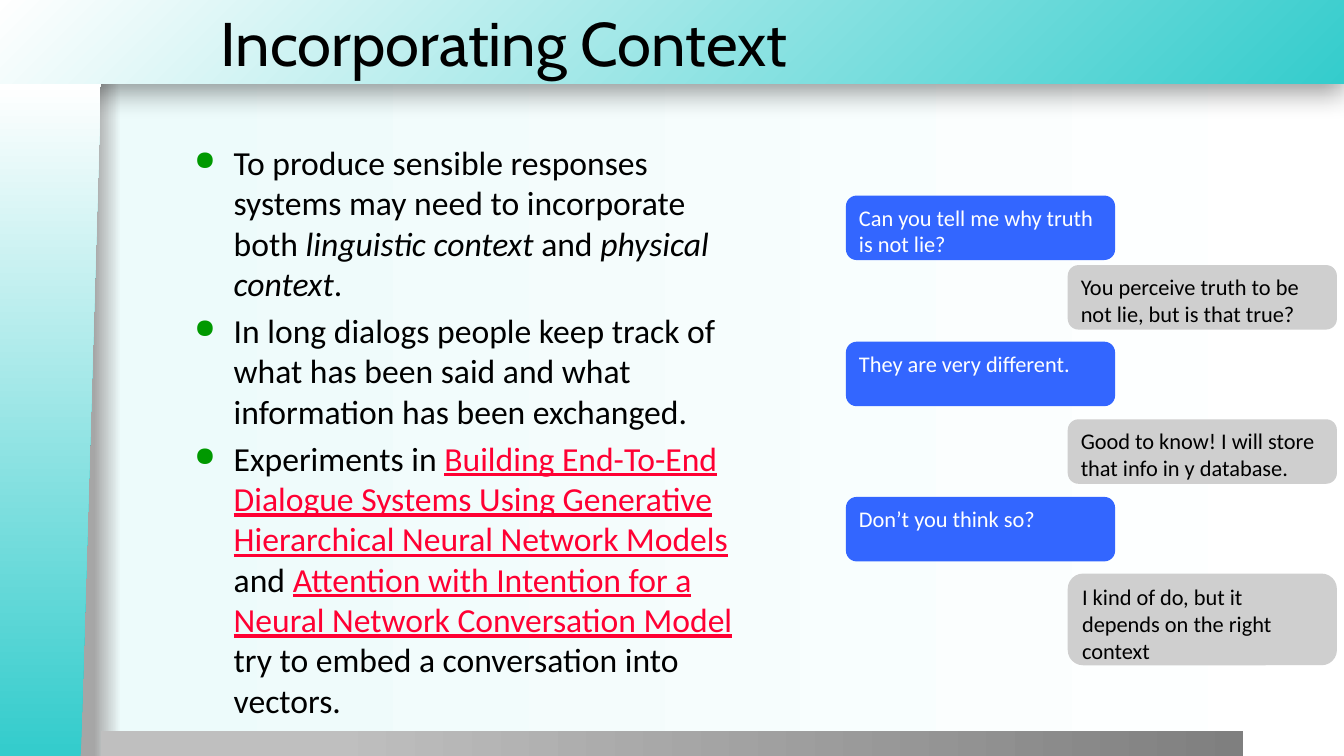
"""Build the Incorporating Context slide with its themed frame, bullets and chat."""
import pptx
import pptx.dml.color
import pptx.enum.shapes
import pptx.enum.text
import pptx.oxml
import pptx.oxml.ns
import pptx.util

TITLE = "Incorporating Context"
BULLETS = [
    [("To produce sensible responses systems may need to incorporate both ", "plain"),
     ("linguistic context", "italic"), (" and ", "plain"),
     ("physical context", "italic"), (".", "plain")],
    [("In long dialogs people keep track of what has been said and what "
      "information has been exchanged.", "plain")],
    [("Experiments in ", "plain"),
     ("Building End-To-End Dialogue Systems Using Generative Hierarchical "
      "Neural Network Models", "link"),
     (" and ", "plain"),
     ("Attention with Intention for a Neural Network Conversation Model", "link"),
     (" try to embed a conversation into vectors.", "plain")],
]
CHAT = [
    ("user", 1.94, 0.64, "Can you tell me why truth is not lie?"),
    ("system", 2.63, 0.64, "You perceive truth to be not lie, but is that true?"),
    ("user", 3.39, 0.64, "They are very different."),
    ("system", 4.16, 0.64, "Good to know! I will store that info in y database."),
    ("user", 4.93, 0.64, "Don’t you think so?"),
    ("system", 5.69, 0.91, "I kind of do, but it depends on the right context"),
]
THEME = {
    "heading": "Cabin", "body": "Calibri",
    "title_size": 44, "bullet_size": 24, "chat_size": 16,
    "ink": "000000", "link": "FF0033", "bullet": "009900",
    "background": [(7, "A6A6A6"), (9, "EDFBFB"), (100, "FFFFFF")],
    "band": [(0, "34CCCC"), (100, "FFFFFF")],
    "side": [(1, "34CCCC"), (100, "FFFFFF")],
    "footer": [(20, "BFBFBF"), (100, "7F7F7F")],
}
SPEAKERS = {
    "user": {"left": 8.39, "fill": "3366FF", "color": "FFFFFF"},
    "system": {"left": 10.59, "fill": "CFCFCF", "color": "000000"},
}
STYLES = {
    "plain": {},
    "italic": {"italic": True},
    "link": {"color": THEME["link"], "underline": True},
}
BUBBLE_WIDTH = 2.67
SHAPE = pptx.enum.shapes.MSO_SHAPE
ANCHOR = pptx.enum.text.MSO_ANCHOR
NAMESPACE = pptx.oxml.ns.nsdecls("a")


def rgb(value):
    return pptx.dml.color.RGBColor.from_string(value)


def inches(*lengths):
    return [pptx.util.Inches(length) for length in lengths]


def add_text(para, text, size, font=THEME["body"], color=THEME["ink"],
             italic=False, underline=False):
    span = para.add_run()
    span.text = text
    span.font.size = pptx.util.Pt(size)
    span.font.name = font
    span.font.color.rgb = rgb(color)
    span.font.italic = italic
    span.font.underline = underline


def set_gradient(parent, stops, direction='<a:lin ang="0" scaled="0"/>'):
    marks = "".join(f'<a:gs pos="{position * 1000}"><a:srgbClr val="{color}"/></a:gs>'
                    for position, color in stops)
    gradient = pptx.oxml.parse_xml(
        f'<a:gradFill {NAMESPACE} rotWithShape="1"><a:gsLst>{marks}</a:gsLst>'
        f'{direction}</a:gradFill>')
    solid = parent.find(pptx.oxml.ns.qn("a:solidFill"))
    parent.replace(solid, gradient)


def add_panel(page, kind, place, fill):
    panel = page.shapes.add_shape(kind, *inches(*place))
    panel.shadow.inherit = False
    panel.fill.solid()
    panel.fill.fore_color.rgb = rgb(fill)
    panel.line.fill.background()
    return panel


def add_frame(page):
    page.background.fill.solid()
    page.background.fill.fore_color.rgb = rgb("FFFFFF")
    backdrop = next(page.element.iter(pptx.oxml.ns.qn("p:bgPr")))
    set_gradient(backdrop, THEME["background"])

    band = add_panel(page, SHAPE.RECTANGLE, (-0.01, 0, 13.34, 0.83), "FFFFFF")
    corner = ('<a:path path="circle"><a:fillToRect l="100000" t="100000"/></a:path>'
              '<a:tileRect r="-100000" b="-100000"/>')
    set_gradient(band.element.spPr, THEME["band"], corner)
    effects = band.element.spPr.find(pptx.oxml.ns.qn("a:effectLst"))
    effects.append(pptx.oxml.parse_xml(
        f'<a:outerShdw {NAMESPACE} blurRad="{pptx.util.Pt(20)}" '
        f'dist="{pptx.util.Pt(6)}" dir="5400000" algn="t" rotWithShape="0">'
        '<a:srgbClr val="000000"><a:alpha val="40000"/></a:srgbClr></a:outerShdw>'))

    footer = add_panel(page, SHAPE.RECTANGLE, (1, 7.25, 11.33, 0.26), "FFFFFF")
    set_gradient(footer.element.spPr, THEME["footer"])

    side = add_panel(page, SHAPE.FLOWCHART_MANUAL_INPUT, (-2.84, 3.67, 6.68, 1), "FFFFFF")
    side.rotation = 270
    side.element.spPr.get_or_add_xfrm().set("flipV", "1")
    set_gradient(side.element.spPr, THEME["side"])


def add_box(page, place, anchor):
    frame = page.shapes.add_textbox(*inches(*place)).text_frame
    frame.word_wrap = True
    frame.vertical_anchor = anchor
    return frame


def set_bullet(para):
    properties = para._p.get_or_add_pPr()
    indent = pptx.util.Inches(0.39)
    properties.set("marL", str(indent))
    properties.set("indent", str(-indent))
    for markup in (
        f'<a:spcBef {NAMESPACE}><a:spcPct val="20000"/></a:spcBef>',
        f'<a:buClr {NAMESPACE}><a:srgbClr val="{THEME["bullet"]}"/></a:buClr>',
        f'<a:buSzPct {NAMESPACE} val="80000"/>',
        f'<a:buChar {NAMESPACE} char="●"/>',
    ):
        properties.append(pptx.oxml.parse_xml(markup))


def add_bullets(page):
    frame = add_box(page, (1.83, 1.36, 5.63, 5.79), ANCHOR.TOP)
    for index, pieces in enumerate(BULLETS):
        para = frame.add_paragraph() if index else frame.paragraphs[0]
        set_bullet(para)
        for text, style in pieces:
            add_text(para, text, THEME["bullet_size"], **STYLES[style])


def add_chat(page):
    for speaker, top, height, text in CHAT:
        look = SPEAKERS[speaker]
        bubble = add_panel(page, SHAPE.ROUNDED_RECTANGLE,
                           (look["left"], top, BUBBLE_WIDTH, height), look["fill"])
        frame = bubble.text_frame
        frame.word_wrap = True
        frame.vertical_anchor = ANCHOR.TOP
        para = frame.paragraphs[0]
        para.alignment = pptx.enum.text.PP_ALIGN.LEFT
        add_text(para, text, THEME["chat_size"], color=look["color"])


def main():
    deck = pptx.Presentation()
    deck.slide_width, deck.slide_height = inches(13.33, 7.5)
    page = deck.slides.add_slide(deck.slide_layouts[6])
    add_frame(page)
    title = add_box(page, (2.09, 0, 11.25, 0.83), ANCHOR.MIDDLE)
    add_text(title.paragraphs[0], TITLE, THEME["title_size"], font=THEME["heading"])
    add_bullets(page)
    add_chat(page)
    deck.save("out.pptx")


if __name__ == "__main__":
    main()
